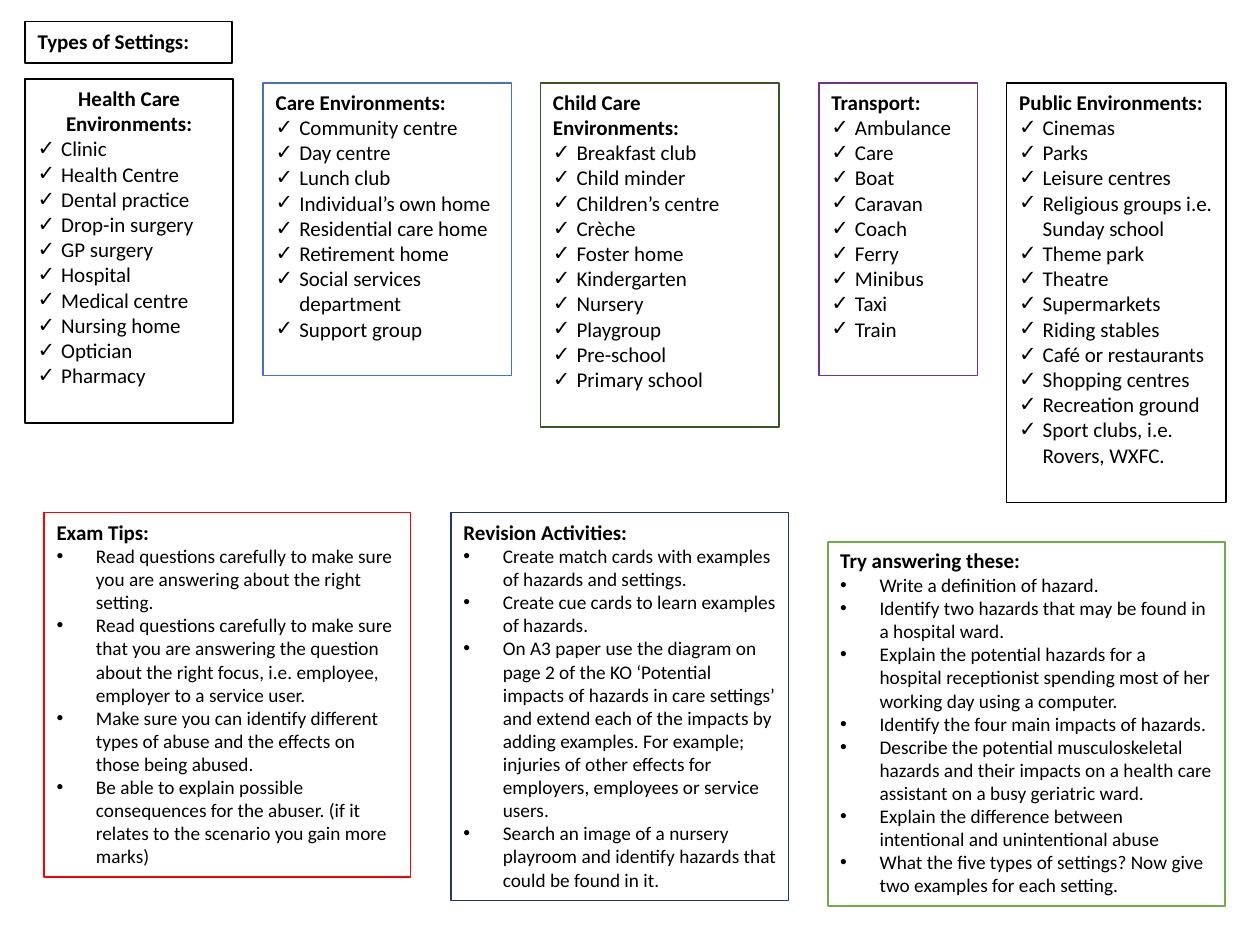
from dataclasses import dataclass

from lxml import etree
from pptx import Presentation
from pptx.dml.color import RGBColor
from pptx.enum.text import MSO_ANCHOR, MSO_AUTO_SIZE, PP_ALIGN
from pptx.oxml.ns import qn
from pptx.util import Inches, Pt

LEFT, CENTER = PP_ALIGN.LEFT, PP_ALIGN.CENTER
TOP, MIDDLE = MSO_ANCHOR.TOP, MSO_ANCHOR.MIDDLE
FIXED = MSO_AUTO_SIZE.NONE


@dataclass(frozen=True)
class Theme:
    font: str = "Calibri"
    marks: str = "Arial"
    head: float = 12
    small: float = 11
    ink: str = "000000"
    paper: str = "FFFFFF"
    blue: str = "4472C4"
    forest: str = "385723"
    purple: str = "7030A0"
    red: str = "FF0000"
    navy: str = "203864"
    green: str = "70AD47"
    thick: float = 1
    thin: float = 0.75


THEME = Theme()


@dataclass(frozen=True)
class Style:
    mark: str
    indent: float
    size: float


TICK = Style("✓", 3 / 16, THEME.head)
DOT = Style("•", 5 / 16, THEME.small)


@dataclass(frozen=True)
class Card:
    left: float
    top: float
    width: float
    height: float
    color: str
    weight: float
    style: Style
    title: str
    items: tuple[str, ...] = ()
    align: PP_ALIGN = LEFT
    anchor: MSO_ANCHOR = TOP
    spacing: float = 1.0


ROW, LOWER = 0.66, 4.07

CARDS = (
    Card(0.2, 0.17, 1.64, 0.33, THEME.ink, THEME.thick, TICK,
         "Types of Settings:", anchor=MIDDLE, spacing=0.9),
    Card(0.2, 0.63, 1.65, 2.73, THEME.ink, THEME.thick, TICK,
         "Health Care Environments:",
         ("Clinic", "Health Centre", "Dental practice", "Drop-in surgery",
          "GP surgery", "Hospital", "Medical centre", "Nursing home",
          "Optician", "Pharmacy"), align=CENTER),
    Card(2.09, ROW, 1.97, 2.32, THEME.blue, THEME.thick, TICK,
         "Care Environments:",
         ("Community centre", "Day centre", "Lunch club",
          "Individual’s own home", "Residential care home",
          "Retirement home", "Social services department",
          "Support group")),
    Card(4.29, ROW, 1.89, 2.73, THEME.forest, THEME.thick, TICK,
         "Child Care Environments:",
         ("Breakfast club", "Child minder", "Children’s centre", "Crèche",
          "Foster home", "Kindergarten", "Nursery", "Playgroup",
          "Pre-school", "Primary school")),
    Card(6.5, ROW, 1.26, 2.32, THEME.purple, THEME.thin, TICK,
         "Transport:",
         ("Ambulance", "Care", "Boat", "Caravan", "Coach", "Ferry",
          "Minibus", "Taxi", "Train")),
    Card(7.99, ROW, 1.74, 3.33, THEME.ink, THEME.thin, TICK,
         "Public Environments:",
         ("Cinemas", "Parks", "Leisure centres",
          "Religious groups i.e. Sunday school", "Theme park", "Theatre",
          "Supermarkets", "Riding stables", "Café or restaurants",
          "Shopping centres", "Recreation ground",
          "Sport clubs, i.e. Rovers, WXFC.")),
    Card(0.35, LOWER, 2.91, 2.89, THEME.red, THEME.thin, DOT,
         "Exam Tips:",
         ("Read questions carefully to make sure you are answering about "
          "the right setting.",
          "Read questions carefully to make sure that you are answering the "
          "question about the right focus, i.e. employee, employer to a "
          "service user.",
          "Make sure you can identify different types of abuse and the "
          "effects on those being abused.",
          "Be able to explain possible consequences for the abuser. (if it "
          "relates to the scenario you gain more marks)")),
    Card(3.58, LOWER, 2.68, 3.08, THEME.navy, THEME.thin, DOT,
         "Revision Activities:",
         ("Create match cards with examples of hazards and settings.",
          "Create cue cards to learn examples of hazards.",
          "On A3 paper use the diagram on page 2 of the KO ‘Potential "
          "impacts of hazards in care settings’ and extend each of the "
          "impacts by adding examples. For example; injuries of other "
          "effects for employers, employees or service users.",
          "Search an image of a nursery playroom and identify hazards that "
          "could be found in it.")),
    Card(6.57, 4.3, 3.15, 2.89, THEME.green, THEME.thick, DOT,
         "Try answering these:",
         ("Write a definition of hazard.",
          "Identify two hazards that may be found in a hospital ward.",
          "Explain the potential hazards for a hospital receptionist "
          "spending most of her working day using a computer.",
          "Identify the four main impacts of hazards.",
          "Describe the potential musculoskeletal hazards and their impacts "
          "on a health care assistant on a busy geriatric ward.",
          "Explain the difference between intentional and unintentional "
          "abuse",
          "What the five types of settings? Now give two examples for each "
          "setting.")),
)


def write(para, text: str, size: float, bold: bool = False) -> None:
    para.text = text
    for run in para.runs:
        run.font.name = THEME.font
        run.font.size = Pt(size)
        run.font.bold = bold
        run.font.color.rgb = RGBColor.from_string(THEME.ink)


def add_mark(para, style: Style) -> None:
    """Give a paragraph its bullet and hanging indent."""
    props = para._p.get_or_add_pPr()
    props.set("marL", str(Inches(style.indent)))
    props.set("indent", str(-Inches(style.indent)))
    etree.SubElement(props, qn("a:buFont")).set("typeface", THEME.marks)
    etree.SubElement(props, qn("a:buChar")).set("char", style.mark)


def draw(slide, card: Card) -> None:
    box = slide.shapes.add_textbox(Inches(card.left), Inches(card.top),
                                   Inches(card.width), Inches(card.height))
    if card.weight == THEME.thick:
        box.fill.solid()
        box.fill.fore_color.rgb = RGBColor.from_string(THEME.paper)
    box.line.color.rgb = RGBColor.from_string(card.color)
    box.line.width = Pt(card.weight)

    frame = box.text_frame
    frame.word_wrap = True
    frame.auto_size = FIXED
    frame.vertical_anchor = card.anchor
    head = frame.paragraphs[0]
    head.alignment = card.align
    head.line_spacing = card.spacing
    write(head, card.title, THEME.head, bold=True)
    for item in card.items:
        para = frame.add_paragraph()
        add_mark(para, card.style)
        write(para, item, card.style.size)


def main() -> None:
    deck = Presentation()
    deck.slide_width, deck.slide_height = Inches(10), Inches(7.5)
    slide = deck.slides.add_slide(deck.slide_layouts[6])
    for card in CARDS:
        draw(slide, card)
    deck.save("out.pptx")


if __name__ == "__main__":
    main()
